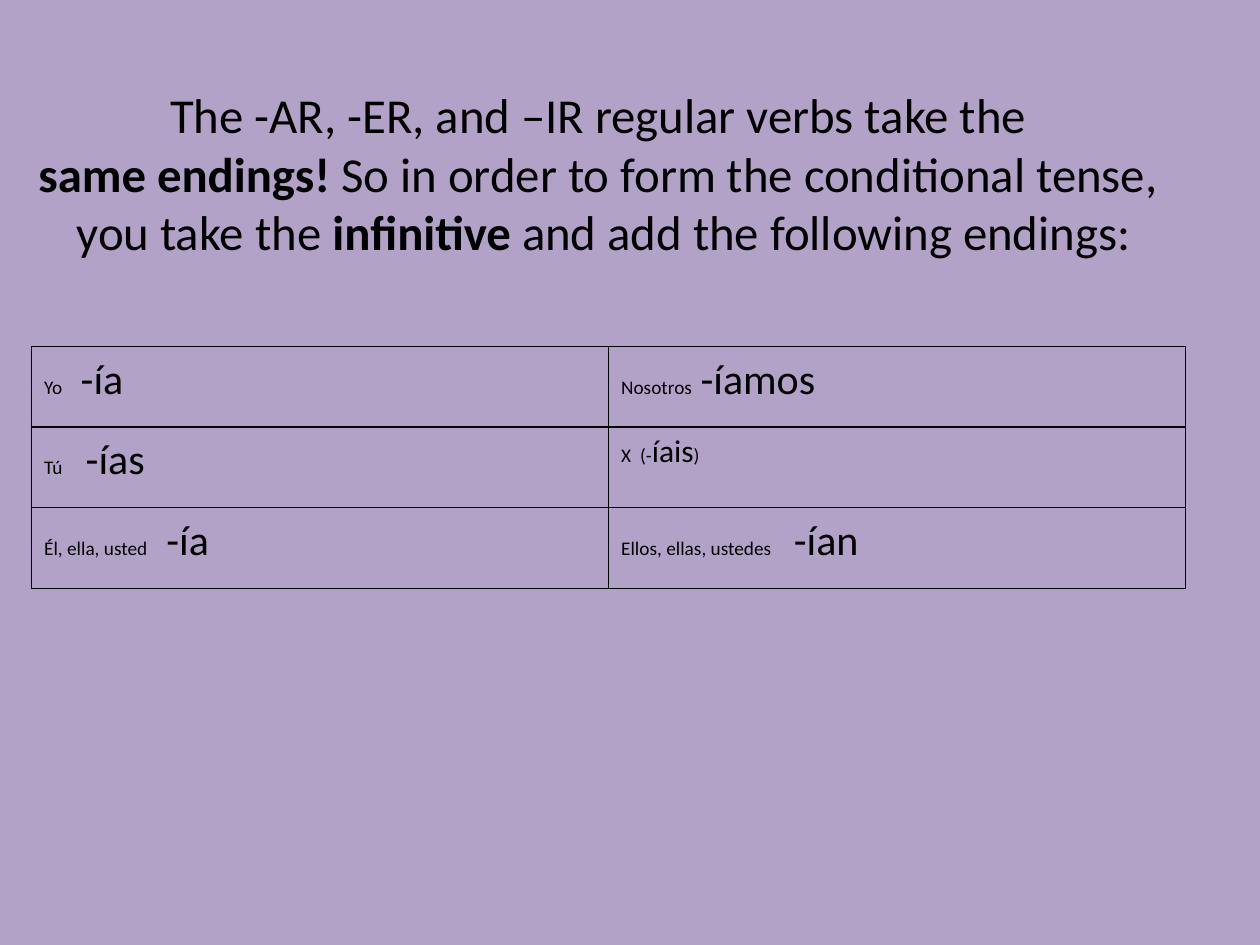
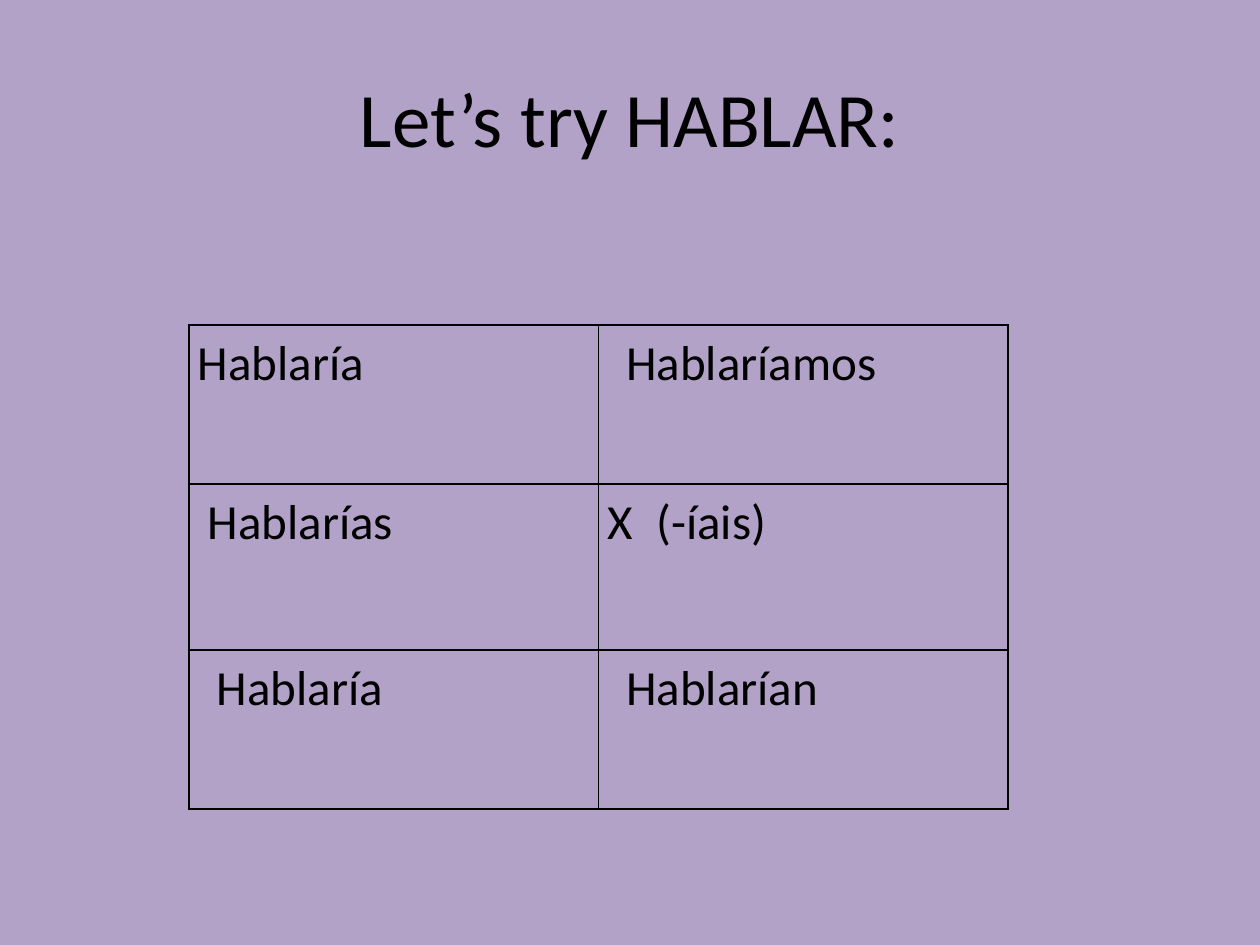
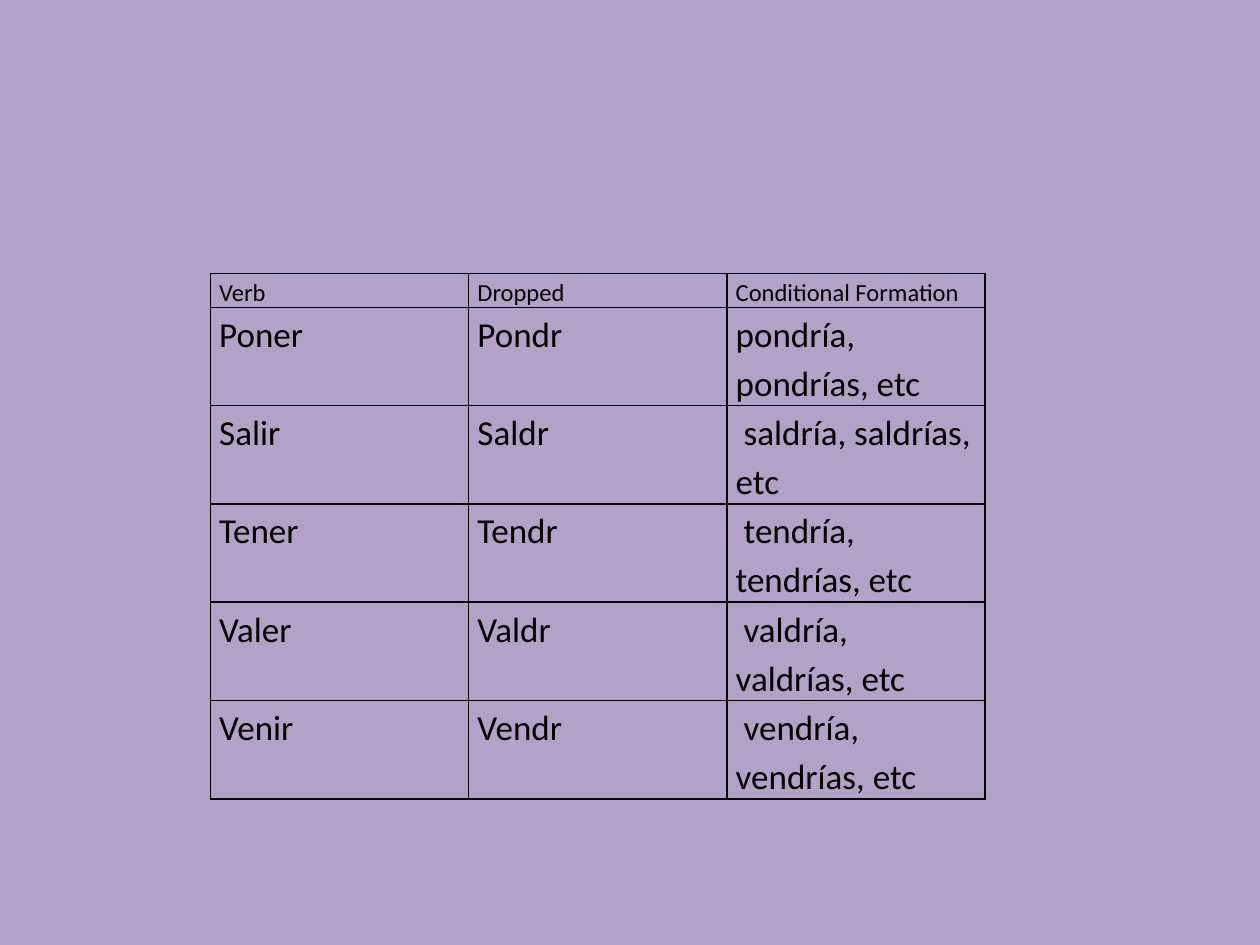
from pptx import Presentation
from pptx.dml.color import RGBColor
from pptx.enum.text import MSO_ANCHOR, PP_ALIGN
from pptx.oxml.ns import qn
from pptx.util import Inches, Pt
from lxml.etree import SubElement

COLORS = {"background": "B3A2C7", "ink": "000000"}
FONT = "Calibri"


def write(paragraph, text, size, bold=False):
    """Add text to a paragraph; each newline becomes a line break."""
    for number, line in enumerate(text.split("\n")):
        if number:
            paragraph.add_line_break()
        if line:
            run = paragraph.add_run()
            run.text = line
            run.font.name = FONT
            run.font.size = Pt(size)
            run.font.bold = bold
            run.font.color.rgb = RGBColor.from_string(COLORS["ink"])


def add_grid(slide, left, top, col_width, row_heights, rows, margin):
    """Add a ruled table; a cell is (runs, left indent, tab stop)."""
    grid = slide.shapes.add_table(
        len(rows), len(rows[0]), Inches(left), Inches(top),
        Inches(col_width * len(rows[0])), Inches(sum(row_heights))).table
    grid.first_row = grid.horz_banding = False
    for column in grid.columns:
        column.width = Inches(col_width)
    for r, row in enumerate(rows):
        grid.rows[r].height = Inches(row_heights[r])
        for c, (runs, indent, tab) in enumerate(row):
            cell = grid.cell(r, c)
            cell.margin_left = Inches(margin + indent)
            cell.margin_right = Inches(margin)
            cell.margin_top = cell.margin_bottom = 0
            paragraph = cell.text_frame.paragraphs[0]
            paragraph.line_spacing = 1.15
            if tab:
                stops = SubElement(paragraph._p.get_or_add_pPr(), qn("a:tabLst"))
                SubElement(stops, qn("a:tab"), pos=str(Inches(tab)), algn="l")
            for text, size in runs:
                write(paragraph, text, size)
            # Borders come before the fill in the cell properties
            properties = cell._tc.get_or_add_tcPr()
            for side in ("lnL", "lnR", "lnT", "lnB"):
                border = SubElement(properties, qn(f"a:{side}"), w=str(Pt(1)))
                paint = SubElement(border, qn("a:solidFill"))
                SubElement(paint, qn("a:srgbClr"), val=COLORS["ink"])
            cell.fill.background()


prs = Presentation()
prs.slide_width, prs.slide_height = Inches(10), Inches(7.5)

# Shared background, and the titles of the first two slides
titles = [
    ((0.08, 0.42, 9.42, 2.5), 0.65, 27.9, [
        ("The -AR, -ER, and –IR regular verbs take the \n", False),
        ("same endings! ", True),
        ("So in order to form the conditional tense, \nyou take the", False),
        (" infinitive", True),
        (" and add the following endings:", False)]),
    ((0.5, 0.3, 9, 1.25), 0.05, 44, [("Let’s try HABLAR:", False)]),
    None,
]
slides = []
for title in titles:
    slide = prs.slides.add_slide(prs.slide_layouts[6])
    slide.background.fill.solid()
    slide.background.fill.fore_color.rgb = RGBColor.from_string(COLORS["background"])
    slides.append(slide)
    if title:
        place, bottom_margin, size, runs = title
        frame = slide.shapes.add_textbox(*map(Inches, place)).text_frame
        frame.word_wrap = True
        frame.vertical_anchor = MSO_ANCHOR.MIDDLE
        frame.margin_bottom = Inches(bottom_margin)
        heading = frame.paragraphs[0]
        heading.alignment = PP_ALIGN.CENTER
        for text, bold in runs:
            write(heading, text, size, bold=bold)
endings_slide, hablar_slide, irregular_slide = slides

# Endings: pronoun, ending, and where the ending starts
endings = [
    [("Yo", "-ía", 0.29), ("Nosotros", "-íamos", 0.63)],
    [("Tú", "-ías", 0.33), None],
    [("Él, ella, usted", "-ía", 0.97), ("Ellos, ellas, ustedes", "-ían", 1.37)],
]
vosotros = ([("X\t(-", 11), ("íais", 18), (")", 11)], 0, 0.15)
ending_rows = [
    [([(pair[0] + "\t", 11), (pair[1], 24)], 0, pair[2]) if pair else vosotros
     for pair in row]
    for row in endings]
add_grid(endings_slide, 0.25, 2.75, 4.58, [0.64] * 3, ending_rows, 0.1)

# Conjugation of hablar: form, indent, tab stop
hablar = [
    [("Hablaría", 0, None), ("Hablaríamos", 0.15, None)],
    [("Hablarías", 0.08, None), ("X\t(-íais)", 0, 0.39)],
    [("Hablaría", 0.15, None), ("Hablarían", 0.15, None)],
]
hablar_rows = [[([(form, 28)], indent, tab) for form, indent, tab in row]
               for row in hablar]
add_grid(hablar_slide, 1.5, 2.58, 3.25, [1.26, 1.32, 1.26], hablar_rows, 0.07)

# Irregular stems
irregular = [
    ("Verb", "Dropped", "Conditional Formation"),
    ("Poner", "Pondr", "pondría, pondrías, etc"),
    ("Salir", "Saldr", " saldría, saldrías, etc"),
    ("Tener", "Tendr", " tendría, tendrías, etc"),
    ("Valer", "Valdr", " valdría, \nvaldrías, etc"),
    ("Venir", "Vendr", " vendría, vendrías, etc"),
]
irregular_rows = [[([(text, 20 if number else 14)], 0, None) for text in row]
                  for number, row in enumerate(irregular)]
add_grid(irregular_slide, 1.67, 2.17, 2.05, [0.27] + [0.78] * 5, irregular_rows, 0.07)

prs.save("out.pptx")
